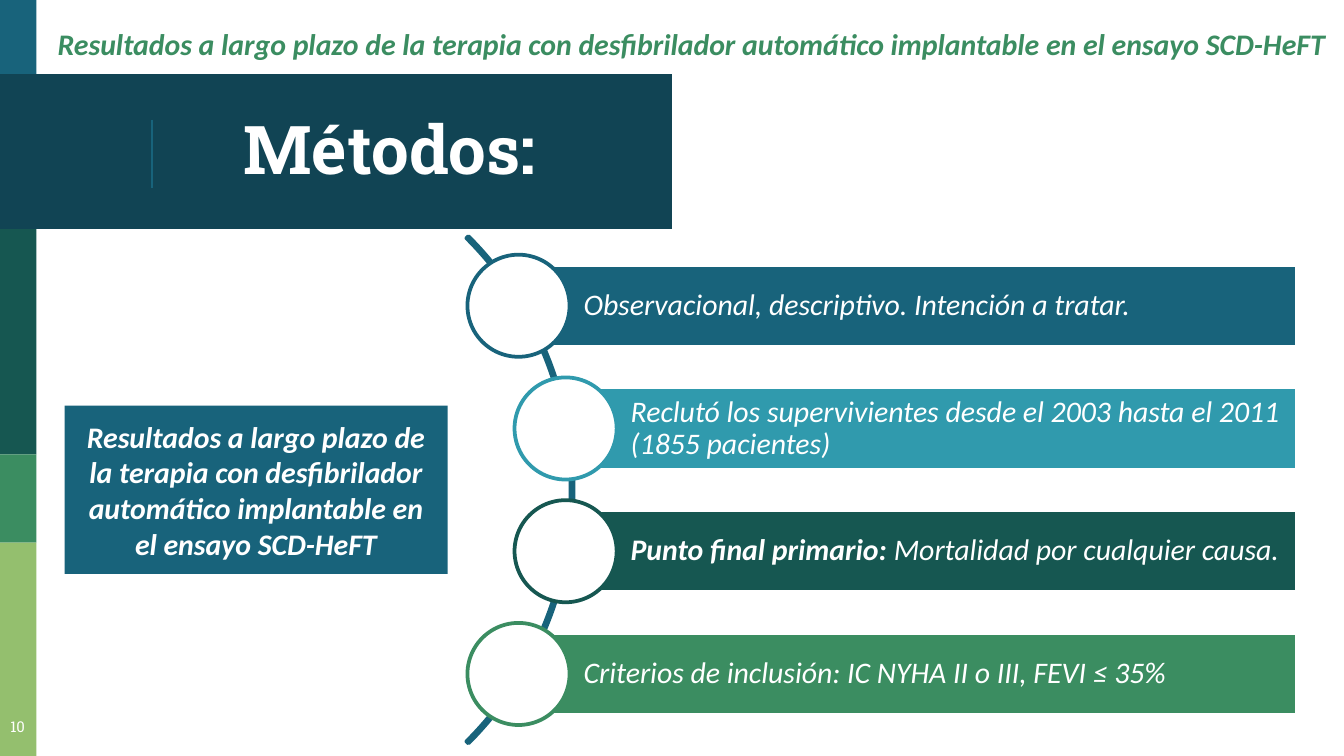
from lxml.etree import SubElement
from pptx import Presentation
from pptx.dml.color import RGBColor
from pptx.enum.shapes import MSO_CONNECTOR, MSO_SHAPE
from pptx.enum.text import MSO_ANCHOR, PP_ALIGN
from pptx.oxml.ns import qn
from pptx.util import Cm, Pt

COLORS = {
    "white": "FFFFFF",
    "blue": "18637B",
    "navy": "114454",
    "teal": "309AAD",
    "dark green": "165751",
    "green": "3B8D61",
    "light green": "94BF6E",
}
STUDY = ("Resultados a largo plazo de la terapia con desfibrilador "
         "automático implantable en el ensayo SCD-HeFT")
BANDS = [
    (0, 0.69, 1.47, "blue"),
    (1.4, 12.7, 2.93, "navy"),
    (4.33, 0.69, 4.26, "dark green"),
    (8.59, 0.69, 1.67, "green"),
    (10.26, 0.69, 4.03, "light green"),
]
STEPS = [
    (9.8, "blue", [("Observacional, descriptivo. Intención a tratar.", False)]),
    (10.69, "teal", [("Reclutó los supervivientes desde el 2003 hasta el 2011 "
                      "(1855 pacientes)", False)]),
    (10.69, "dark green", [("Punto final primario: ", True),
                           ("Mortalidad por cualquier causa.", False)]),
    (9.8, "green", [("Criterios de inclusión: IC NYHA II o III, FEVI ≤ 35%", False)]),
]
STEP_CENTER, STEP_PITCH, STEP_RIGHT = 5.78, 2.32, 24.51
BAR_HEIGHT, CIRCLE_SIZE = 1.55, 1.93
ARC_CENTER_X, ARC_SIZE = 4.06, 13.56


def rgb(name):
    return RGBColor.from_string(COLORS[name])


def add_shape(slide, kind, left, top, width, height, fill=None, line=None):
    shape = slide.shapes.add_shape(kind, Cm(left), Cm(top), Cm(width), Cm(height))
    shape.shadow.inherit = False
    if fill:
        shape.fill.solid()
        shape.fill.fore_color.rgb = rgb(fill)
    else:
        shape.fill.background()
    if line:
        shape.line.color.rgb = rgb(line)
        shape.line.width = Pt(2)
    else:
        shape.line.fill.background()
    return shape


def write(shape, runs, size, color="white", font="Calibri", italic=False,
          align=PP_ALIGN.CENTER, anchor=MSO_ANCHOR.MIDDLE, insets=(0.25, 0.25)):
    frame = shape.text_frame
    frame.word_wrap = True
    frame.vertical_anchor = anchor
    frame.margin_left = Cm(insets[0])
    frame.margin_top = frame.margin_right = frame.margin_bottom = Cm(insets[1])
    paragraph = frame.paragraphs[0]
    paragraph.alignment = align
    paragraph.font.size = Pt(size)
    paragraph.font.name = font
    paragraph.font.italic = italic
    paragraph.font.color.rgb = rgb(color)
    for text, bold in runs:
        run = paragraph.add_run()
        run.text = text
        run.font.bold = bold
    return paragraph


def add_text(slide, left, top, width, height, runs, size, **style):
    box = slide.shapes.add_textbox(Cm(left), Cm(top), Cm(width), Cm(height))
    write(box, runs, size, **style)


def add_frame(slide):
    for top, width, height, color in BANDS:
        add_shape(slide, MSO_SHAPE.RECTANGLE, 0, top, width, height, color)
    divider = slide.shapes.add_connector(
        MSO_CONNECTOR.STRAIGHT, Cm(2.87), Cm(2.26), Cm(2.87), Cm(3.56))
    divider.line.color.rgb = rgb("blue")
    divider.line.width = Pt(0.75)
    SubElement(divider.line._get_or_add_ln().getparent(), qn("a:effectLst"))
    add_text(slide, -0.15, 13.39, 0.97, 0.89, [("10", False)], 8,
             font="Roboto Slab", anchor=MSO_ANCHOR.TOP)


def add_headings(slide):
    add_text(slide, 0.84, 0.23, 24.56, 1.17, [(STUDY, True)], 16,
             color="green", italic=True, align=PP_ALIGN.LEFT)
    add_text(slide, 2.79, 1.65, 9.14, 2.16, [("Métodos:", True)], 36,
             font="Roboto Slab", anchor=MSO_ANCHOR.BOTTOM)
    study_box = add_shape(slide, MSO_SHAPE.RECTANGLE, 1.22, 7.67, 7.24, 3.18, "blue")
    write(study_box, [(STUDY, True)], 16, italic=True)


def add_steps(slide):
    arc_center_y = STEP_CENTER + STEP_PITCH * (len(STEPS) - 1) / 2
    arc = add_shape(slide, MSO_SHAPE.BLOCK_ARC, ARC_CENTER_X - ARC_SIZE / 2,
                    arc_center_y - ARC_SIZE / 2, ARC_SIZE, ARC_SIZE, line="blue")
    for index, value in enumerate((189, 27, 0.004)):
        arc.adjustments[index] = value

    for index, (left, color, runs) in enumerate(STEPS):
        center = STEP_CENTER + index * STEP_PITCH
        bar = add_shape(slide, MSO_SHAPE.RECTANGLE, left, center - BAR_HEIGHT / 2,
                        STEP_RIGHT - left, BAR_HEIGHT, color, "white")
        paragraph = write(bar, runs, 16, italic=True, align=PP_ALIGN.LEFT,
                          insets=(1.23, 0.1))
        paragraph.line_spacing = 0.9
        add_shape(slide, MSO_SHAPE.OVAL, left - CIRCLE_SIZE / 2,
                  center - CIRCLE_SIZE / 2, CIRCLE_SIZE, CIRCLE_SIZE, "white", color)


def main():
    presentation = Presentation()
    presentation.slide_width = Cm(25.4)
    presentation.slide_height = Cm(14.29)
    slide = presentation.slides.add_slide(presentation.slide_layouts[6])
    add_frame(slide)
    add_headings(slide)
    add_steps(slide)
    presentation.save("out.pptx")


if __name__ == "__main__":
    main()
